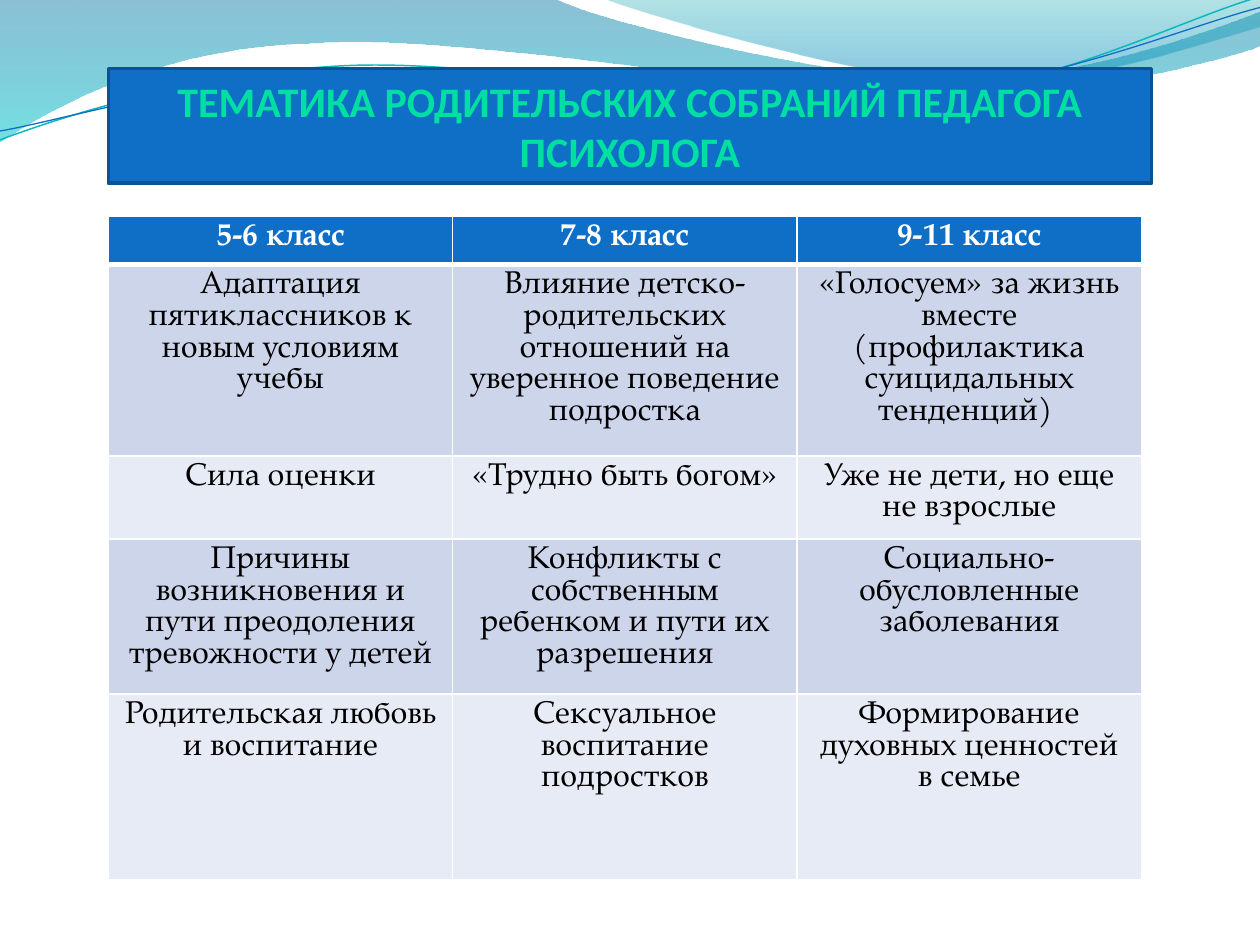
from dataclasses import dataclass
from math import cos, radians, sin
from typing import Optional

from pptx import Presentation
from pptx.dml.color import RGBColor
from pptx.enum.text import MSO_ANCHOR, PP_ALIGN
from pptx.oxml import parse_xml
from pptx.oxml.ns import nsdecls, qn
from pptx.util import Inches, Pt

CENTER = PP_ALIGN.CENTER
MIDDLE = MSO_ANCHOR.MIDDLE
TOP = MSO_ANCHOR.TOP

WHITE = RGBColor(0xFF, 0xFF, 0xFF)
BLACK = RGBColor(0x00, 0x00, 0x00)
BLUE = RGBColor(0x0F, 0x6F, 0xC6)
DARK_BLUE = RGBColor(0x0B, 0x52, 0x92)
TURQUOISE = RGBColor(0x0A, 0xB8, 0xBF)
MINT = RGBColor(0x00, 0xDF, 0xA2)
BAND_DARK = RGBColor(0xCC, 0xD5, 0xEA)
BAND_LIGHT = RGBColor(0xE7, 0xEB, 0xF5)
WAVE_BLUE = RGBColor(0x00, 0x74, 0xA1)
WAVE_CYAN = RGBColor(0x00, 0xC6, 0xCF)
WAVE_TEAL = RGBColor(0x00, 0xA1, 0xA9)
WAVE_SKY = RGBColor(0x00, 0x8B, 0xBF)

TILT = 357.3
LEFT = 0.86
TITLE = "ТЕМАТИКА РОДИТЕЛЬСКИХ СОБРАНИЙ ПЕДАГОГА ПСИХОЛОГА"
TITLE_FONT = {"name": "Calibri", "size": Pt(24), "bold": True}
HEADER_FONT = {"name": "TeX Gyre Pagella", "size": Pt(18), "bold": True}
BODY_FONT = {**HEADER_FONT, "bold": False}

TABLE_WIDTH = 8.2
HEADER_BORDERS = {"a:lnL": 1, "a:lnR": 1, "a:lnT": 1, "a:lnB": 3}
ROW_HEIGHTS = [0.38, 1.52, 0.66, 1.23, 1.47]
MEETINGS = [
    ["5-6 класс", "7-8 класс", "9-11 класс"],
    [
        "Адаптация пятиклассников к новым условиям учебы",
        "Влияние детско-родительских отношений на уверенное поведение подростка",
        "«Голосуем» за жизнь вместе (профилактика суицидальных тенденций) ",
    ],
    ["Сила оценки", "«Трудно быть богом»", "Уже не дети, но еще не взрослые"],
    [
        "Причины возникновения и пути преодоления тревожности у детей",
        "Конфликты с собственным ребенком и пути их разрешения",
        "Социально-обусловленные заболевания",
    ],
    [
        "Родительская любовь и воспитание",
        "Сексуальное воспитание подростков",
        "Формирование духовных ценностей в семье",
    ],
]


@dataclass
class GradientStop:
    position: int
    color: RGBColor
    opacity: int


@dataclass
class Wave:
    start: tuple
    segments: list
    stops: Optional[list] = None
    line_color: Optional[RGBColor] = None
    line_width: float = 0
    center: tuple = (0, 0)
    rotation: float = 0


WAVES = [
    Wave(
        (0, 0),
        [
            [(4.4, -0.01)],
            [(4.76, 0.17), (6.64, 0.63), (7.58, 0.63)],
            [(8.53, 0.63), (9.58, 0.26), (10, 0.09)],
            [(10.01, 0.36)],
            [(9.83, 0.44), (8.7, 0.76), (7.46, 0.75)],
            [(6.22, 0.75), (3.82, 0.28), (2.57, 0.34)],
            [(1.29, 0.36), (0.46, 0.83), (-0.01, 1.13)],
            [(0, 0)],
        ],
        stops=[GradientStop(0, WAVE_BLUE, 45), GradientStop(100, WAVE_CYAN, 55)],
    ),
    Wave(
        (4.79, -0.01),
        [
            [(5.09, 0.11), (6.82, 0.62), (7.69, 0.65)],
            [(8.56, 0.69), (9.61, 0.32), (10, 0.21)],
            [(10, 0)],
            [(4.79, -0.01)],
        ],
        stops=[GradientStop(0, WAVE_TEAL, 30), GradientStop(80, WAVE_SKY, 45)],
    ),
    Wave(
        (0, 1.11),
        [
            [(0.48, 0.93), (1.58, 0.57), (2.77, 0.52)],
            [(3.95, 0.47), (5.93, 0.89), (7.13, 0.8)],
            [(8.33, 0.71), (9.38, 0.15), (9.98, -0.02)],
        ],
        line_color=TURQUOISE, line_width=0.85, center=(4.99, 0.58), rotation=TILT,
    ),
    Wave(
        (0, 1.04),
        [
            [(0.47, 0.96), (1.64, 0.61), (2.83, 0.56)],
            [(4.03, 0.51), (5.97, 0.84), (7.17, 0.75)],
            [(8.36, 0.67), (9.41, 0.21), (10, 0.06)],
        ],
        line_color=BLUE, line_width=0.75, center=(5, 0.59), rotation=TILT,
    ),
]


def unrotated_point(wave: Wave, point: tuple) -> tuple:
    angle = radians(-wave.rotation)
    center_x, center_y = wave.center
    x, y = point[0] - center_x, point[1] - center_y
    return (
        Inches(center_x + x * cos(angle) - y * sin(angle)),
        Inches(center_y + x * sin(angle) + y * cos(angle)),
    )


def bend_segments(shape, segments: list) -> None:
    lines = iter(list(shape._element.iter(qn("a:lnTo"))))
    for segment in segments:
        segment_lines = [next(lines) for _ in segment]
        if len(segment) == 1:
            continue
        curve = parse_xml(f'<a:cubicBezTo {nsdecls("a")}/>')
        segment_lines[0].addprevious(curve)
        for line in segment_lines:
            curve.append(line[0])
            line.getparent().remove(line)


def set_vertical_gradient(shape, stops: list) -> None:
    stop_xml = "".join(
        f'<a:gs pos="{stop.position * 1000}"><a:srgbClr val="{stop.color}">'
        f'<a:alpha val="{stop.opacity * 1000}"/></a:srgbClr></a:gs>'
        for stop in stops
    )
    gradient = parse_xml(
        f'<a:gradFill {nsdecls("a")} rotWithShape="1"><a:gsLst>{stop_xml}</a:gsLst>'
        '<a:lin ang="5400000" scaled="0"/></a:gradFill>'
    )
    shape._element.spPr.find(qn("a:ln")).addprevious(gradient)


def draw_wave(slide, wave: Wave) -> None:
    points = [unrotated_point(wave, point) for segment in wave.segments for point in segment]
    builder = slide.shapes.build_freeform(*unrotated_point(wave, wave.start))
    builder.add_line_segments(points, close=wave.stops is not None)
    shape = builder.convert_to_shape()
    bend_segments(shape, wave.segments)
    shape.rotation = wave.rotation
    shape.shadow.inherit = False
    if wave.stops:
        shape.line.fill.background()
        set_vertical_gradient(shape, wave.stops)
    else:
        shape.fill.background()
        shape.line.color.rgb = wave.line_color
        shape.line.width = Pt(wave.line_width)


def write_text(text_frame, text: str, font_format: dict, color: RGBColor) -> None:
    text_frame.text = text
    paragraph = text_frame.paragraphs[0]
    paragraph.alignment = CENTER
    font = paragraph.runs[0].font
    for name, value in font_format.items():
        setattr(font, name, value)
    font.color.rgb = color


def set_borders(cell, borders: dict) -> None:
    properties = cell._tc.get_or_add_tcPr()
    for index, (tag, width) in enumerate(borders.items()):
        border = parse_xml(
            f'<{tag} {nsdecls("a")} w="{Pt(width)}"><a:solidFill>'
            f'<a:srgbClr val="{WHITE}"/></a:solidFill></{tag}>'
        )
        properties.insert(index, border)


def draw_table(slide) -> None:
    column_count = len(MEETINGS[0])
    table = slide.shapes.add_table(
        len(MEETINGS), column_count, Inches(LEFT), Inches(1.72),
        Inches(TABLE_WIDTH), Inches(sum(ROW_HEIGHTS)),
    ).table
    for index, (row, height, texts) in enumerate(zip(table.rows, ROW_HEIGHTS, MEETINGS)):
        row.height = Inches(height)
        band = BAND_DARK if index % 2 else BAND_LIGHT
        for cell, text in zip(row.cells, texts):
            cell.vertical_anchor = TOP
            cell.fill.solid()
            cell.fill.fore_color.rgb = band if index else BLUE
            font_format, color = (BODY_FONT, BLACK) if index else (HEADER_FONT, WHITE)
            write_text(cell.text_frame, text, font_format, color)
            if index == 0:
                set_borders(cell, HEADER_BORDERS)


def draw_title(slide) -> None:
    title = slide.shapes.title
    title.left, title.top = Inches(LEFT), Inches(0.545)
    title.width, title.height = Inches(8.28), Inches(0.91)
    title.fill.solid()
    title.fill.fore_color.rgb = BLUE
    title.line.color.rgb = DARK_BLUE
    title.line.width = Pt(2)
    title.text_frame.vertical_anchor = MIDDLE
    write_text(title.text_frame, TITLE, TITLE_FONT, MINT)
    slide.shapes._spTree.append(title._element)


presentation = Presentation()
presentation.slide_width, presentation.slide_height = Inches(10), Inches(7.5)
slide = presentation.slides.add_slide(presentation.slide_layouts[5])
for wave in WAVES:
    draw_wave(slide, wave)
draw_table(slide)
draw_title(slide)
presentation.save("out.pptx")
